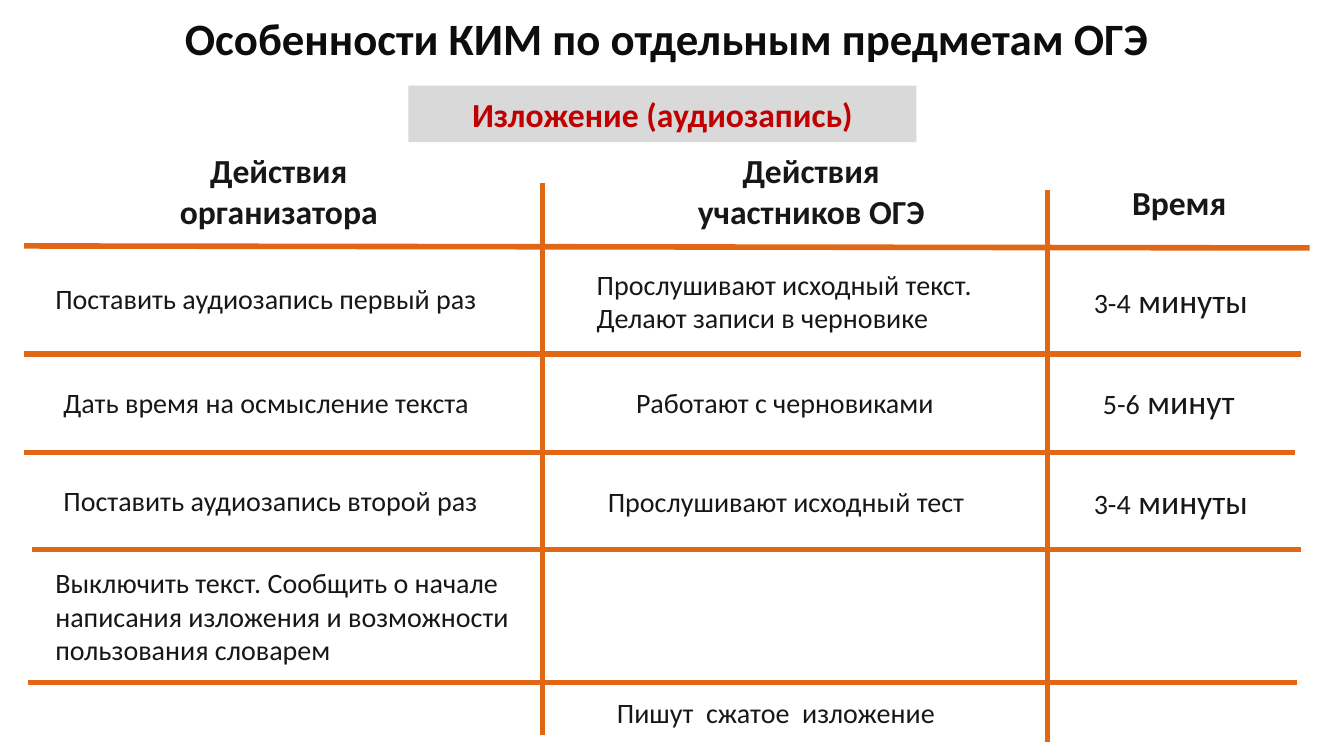
from lxml import etree
from pptx import Presentation
from pptx import util as u
from pptx.dml.color import RGBColor
from pptx.enum import shapes, text
from pptx.oxml.ns import qn

DARK = "181717"
ORANGE = "E26714"


def color(value):
    return RGBColor.from_string(value)


class Board:
    font = "Calibri"
    line_width = u.Pt(4)

    def __init__(self, slide):
        self.slide = slide

    def fill_text(self, box, paragraphs, ink=DARK, bold=False, centered=False, inset=0.05):
        frame = box.text_frame
        frame.word_wrap = True
        frame.auto_size = text.MSO_AUTO_SIZE.NONE
        frame.margin_left = frame.margin_right = u.Inches(0.1)
        frame.margin_top = frame.margin_bottom = u.Inches(inset)
        for index, runs in enumerate(paragraphs):
            para = frame.add_paragraph() if index else frame.paragraphs[0]
            para.alignment = text.PP_ALIGN.CENTER if centered else text.PP_ALIGN.LEFT
            for words, size in runs:
                span = para.add_run()
                span.text = words
                span.font.name = self.font
                span.font.size = u.Pt(size)
                span.font.bold = bold
                span.font.color.rgb = color(ink)

    def title(self, words, left, top, width, height):
        box = self.slide.shapes.title
        box.left, box.top = u.Inches(left), u.Inches(top)
        box.width, box.height = u.Inches(width), u.Inches(height)
        self.fill_text(box, [[(words, 32)]], "0D0D0D", bold=True, centered=True)
        box.text_frame.word_wrap = False

    def banner(self, words, left, top, width, height):
        box = self.slide.shapes.add_shape(
            shapes.MSO_SHAPE.RECTANGLE,
            u.Inches(left), u.Inches(top), u.Inches(width), u.Inches(height))
        box.shadow.inherit = False
        box.fill.solid()
        box.fill.fore_color.rgb = color("D9D9D9")
        box.line.fill.background()
        self.fill_text(box, [[(words, 24)]], "C00000", bold=True, centered=True, inset=0.08)

    def label(self, paragraphs, left, top, width, height, heading=False):
        box = self.slide.shapes.add_textbox(
            u.Inches(left), u.Inches(top), u.Inches(width), u.Inches(height))
        self.fill_text(box, paragraphs, bold=heading, centered=heading)

    def rule(self, left, top, right, bottom):
        line = self.slide.shapes.add_connector(
            shapes.MSO_CONNECTOR.STRAIGHT,
            u.Inches(left), u.Inches(top), u.Inches(right), u.Inches(bottom))
        line.line.color.rgb = color(ORANGE)
        line.line.width = self.line_width
        etree.SubElement(line._element.spPr, qn("a:effectLst"))


def main():
    deck = Presentation()
    deck.slide_width, deck.slide_height = u.Inches(13.33), u.Inches(7.5)
    board = Board(deck.slides.add_slide(deck.slide_layouts[5]))

    board.title("Особенности КИМ по отдельным предметам ОГЭ", 1.69, 0.05, 9.85, 0.64)
    board.banner("Изложение (аудиозапись)", 4.05, 0.85, 5.04, 0.56)

    for ends in [
        (0.24, 2.44, 12.99, 2.46),
        (0.24, 3.51, 12.9, 3.51),
        (0.24, 4.49, 12.84, 4.49),
        (0.32, 5.45, 12.9, 5.45),
        (0.28, 6.77, 12.86, 6.77),
        (5.38, 1.82, 5.38, 7.29),
        (10.39, 1.89, 10.39, 7.36),
    ]:
        board.rule(*ends)

    for words, left, top, width, height in [
        ("Действия организатора", 1.24, 1.44, 3.05, 0.91),
        ("Действия участников ОГЭ", 6.52, 1.44, 3.05, 0.91),
        ("Время", 10.4, 1.76, 2.59, 0.5),
    ]:
        board.label([[(words, 24)]], left, top, width, height, heading=True)

    for lines, left, top, width, height in [
        (["Поставить аудиозапись первый раз"], 0.45, 2.74, 4.83, 0.44),
        (["Дать время на осмысление текста"], 0.53, 3.78, 4.28, 0.44),
        (["Поставить аудиозапись второй раз"], 0.53, 4.75, 4.82, 0.44),
        (["Выключить текст. Сообщить о начале написания изложения "
          "и возможности пользования словарем"], 0.45, 5.56, 4.82, 1.11),
        (["Прослушивают исходный текст.", "Делают записи в черновике"],
         5.82, 2.6, 4.65, 0.77),
        (["Работают с черновиками"], 6.21, 3.78, 3.92, 0.44),
        (["Прослушивают исходный тест"], 5.93, 4.76, 3.92, 0.44),
        (["Пишут  сжатое  изложение"], 6.02, 6.85, 3.92, 0.44),
    ]:
        board.label([[(words, 20)] for words in lines], left, top, width, height)

    for amount, unit, left, top in [
        ("3-4", " минуты", 10.75, 2.73),
        ("5-6", " минут", 10.84, 3.73),
        ("3-4", " минуты", 10.75, 4.72),
    ]:
        board.label([[(amount, 20), (unit, 24)]], left, top, 1.96, 0.5)

    deck.save("out.pptx")


if __name__ == "__main__":
    main()
